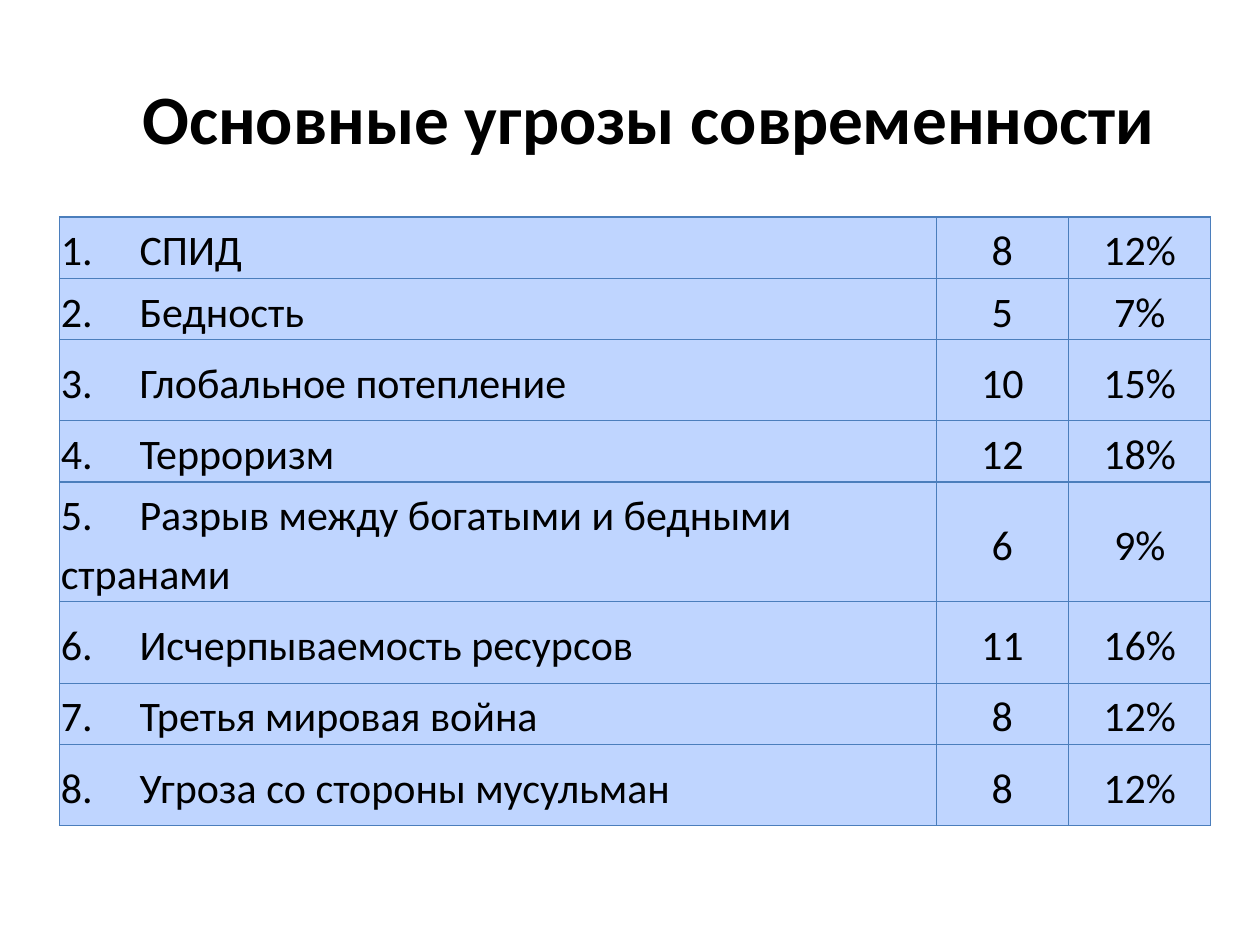
import pptx
import pptx.util
import pptx.dml.color
import pptx.enum.text
import pptx.oxml
import pptx.oxml.ns
from lxml import etree

Pt = pptx.util.Pt
ALIGN = pptx.enum.text.PP_ALIGN
MIDDLE = pptx.enum.text.MSO_ANCHOR.MIDDLE
COLOURS = {"text": "000000", "cell": "BFD5FF", "border": "4B7EBC"}
COLUMN_WIDTHS = [501, 75.6, 81.4]
THREATS = [
    ("СПИД", "8", "12%", 35),
    ("Бедность", "5", "7%", 35),
    ("Глобальное потепление", "10", "15%", 46.5),
    ("Терроризм", "12", "18%", 35),
    ("Разрыв между богатыми и бедными странами", "6", "9%", 68.5),
    ("Исчерпываемость ресурсов", "11", "16%", 46.5),
    ("Третья мировая война", "8", "12%", 35),
    ("Угроза со стороны мусульман", "8", "12%", 46.5),
]


def colour(name):
    return pptx.dml.color.RGBColor.from_string(COLOURS[name])


def add_span(para, text, size, bold=False):
    span = para.add_run()
    span.text = text
    span.font.name = "Calibri"
    span.font.size = Pt(size)
    span.font.bold = bold
    span.font.color.rgb = colour("text")


def add_title(page, left, top, width, height):
    box = page.shapes.add_textbox(Pt(left), Pt(top), Pt(width), Pt(height))
    frame = box.text_frame
    frame.word_wrap = True
    frame.vertical_anchor = MIDDLE
    para = frame.paragraphs[0]
    para.alignment = ALIGN.CENTER
    add_span(para, "Основные угрозы современности", 39.6, True)


def add_borders(cell):
    properties = cell._tc.get_or_add_tcPr()
    for position, side in enumerate(("lnL", "lnR", "lnT", "lnB")):
        line = pptx.oxml.parse_xml(
            f'<a:{side} {pptx.oxml.ns.nsdecls("a")} w="{Pt(0.75)}"><a:solidFill>'
            f'<a:srgbClr val="{COLOURS["border"]}"/></a:solidFill></a:{side}>'
        )
        properties.insert(position, line)


def add_tab_stop(para, position):
    tag = pptx.oxml.ns.qn
    tabs = etree.SubElement(para._p.get_or_add_pPr(), tag("a:tabLst"))
    etree.SubElement(tabs, tag("a:tab"), pos=str(Pt(position)), algn="l")


def fill_cell(cell, text, alignment):
    cell.fill.solid()
    cell.fill.fore_color.rgb = colour("cell")
    cell.vertical_anchor = MIDDLE
    cell.margin_left = cell.margin_right = Pt(0.75)
    cell.margin_top = cell.margin_bottom = Pt(0.75)
    add_borders(cell)
    para = cell.text_frame.paragraphs[0]
    para.alignment = alignment
    para.line_spacing = 1.15
    para.space_after = Pt(10)
    if "\t" in text:
        add_tab_stop(para, 45)
    add_span(para, text, 24)


def add_threat_table(page, left, top, width, height):
    frame = page.shapes.add_table(
        len(THREATS), len(COLUMN_WIDTHS), Pt(left), Pt(top), Pt(width), Pt(height)
    )
    table = frame.table
    table.first_row = False
    table.horz_banding = False
    for column, column_width in zip(table.columns, COLUMN_WIDTHS):
        column.width = Pt(column_width)
    for index, (threat, votes, share, row_height) in enumerate(THREATS):
        table.rows[index].height = Pt(row_height)
        fill_cell(table.cell(index, 0), f"{index + 1}.\t{threat}", ALIGN.LEFT)
        fill_cell(table.cell(index, 1), votes, ALIGN.CENTER)
        fill_cell(table.cell(index, 2), share, ALIGN.CENTER)


def main():
    deck = pptx.Presentation()
    deck.slide_width, deck.slide_height = Pt(720), Pt(540)
    page = deck.slides.add_slide(deck.slide_layouts[6])
    add_title(page, 46.8, 21.6, 648, 90)
    add_threat_table(page, 34, 124, sum(COLUMN_WIDTHS), sum(row[3] for row in THREATS))
    deck.save("out.pptx")


if __name__ == "__main__":
    main()
